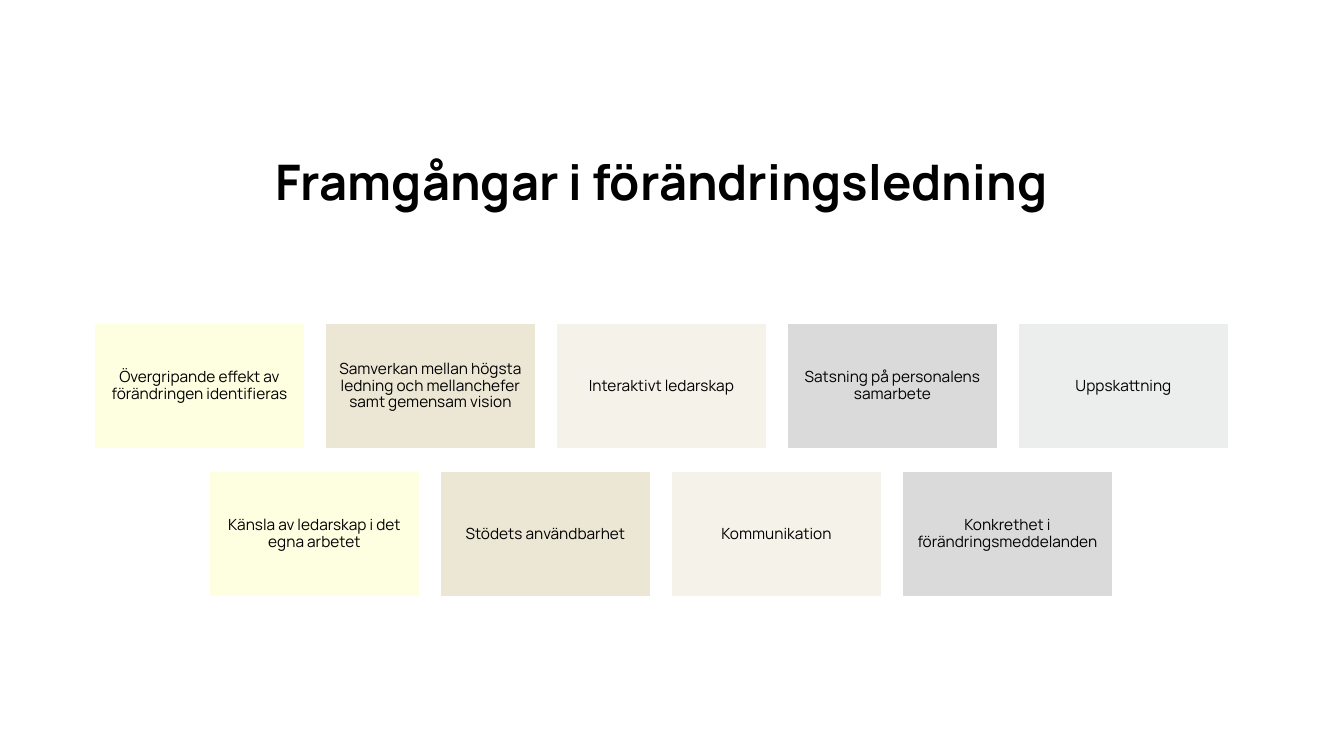
from pptx import Presentation
from pptx.dml.color import RGBColor
from pptx.enum.shapes import MSO_SHAPE
from pptx.enum.text import MSO_ANCHOR, PP_ALIGN
from pptx.util import Emu, Pt

RECT = MSO_SHAPE.RECTANGLE
MIDDLE = MSO_ANCHOR.MIDDLE
CENTER = PP_ALIGN.CENTER

FONT = "Manrope"
COLORS = {
    "text": "000000",
    "border": "FFFFFF",
    "yellow": "FEFFE1",
    "sand": "ECE7D5",
    "cream": "F5F2E9",
    "grey": "DADADA",
    "mist": "ECEDED",
}
CARD_COLORS = ["yellow", "sand", "cream", "grey", "mist"]

# Card grid, in px
CENTER_X, GRID_TOP = 661, 323
CARD_W, CARD_H = 211, 126
GAP_X, GAP_Y = 20, 22

ROWS = [
    [
        "Övergripande effekt av förändringen identifieras",
        "Samverkan mellan högsta ledning och mellanchefer samt gemensam vision",
        "Interaktivt ledarskap",
        "Satsning på personalens samarbete",
        "Uppskattning",
    ],
    [
        "Känsla av ledarskap i det egna arbetet",
        "Stödets användbarhet",
        "Kommunikation",
        "Konkrethet i förändringsmeddelanden",
    ],
]


def px(n):
    return Emu(round(n * 914400 / 100.8))


def rgb(name):
    return RGBColor.from_string(COLORS[name])


def set_text(shape, text, size=11, bold=False, inset=5):
    tf = shape.text_frame
    tf.word_wrap = True
    tf.vertical_anchor = MIDDLE
    tf.margin_left = tf.margin_right = px(inset)
    tf.margin_top = tf.margin_bottom = px(inset)
    p = tf.paragraphs[0]
    p.alignment = CENTER
    p.line_spacing = 0.9
    r = p.add_run()
    r.text = text
    r.font.name = FONT
    r.font.size = Pt(size)
    r.font.bold = bold
    r.font.color.rgb = rgb("text")


def add_title(s, text):
    box = s.shapes.add_textbox(px(93), px(112), px(1137), px(146))
    set_text(box, text, size=35, bold=True)


def add_card(s, x, y, text, color):
    card = s.shapes.add_shape(RECT, px(x), px(y), px(CARD_W), px(CARD_H))
    card.shadow.inherit = False
    card.fill.solid()
    card.fill.fore_color.rgb = rgb(color)
    card.line.color.rgb = rgb("border")
    card.line.width = Pt(1)
    set_text(card, text)


def add_card_row(s, y, texts):
    pitch = CARD_W + GAP_X
    left = CENTER_X - (len(texts) * pitch - GAP_X) // 2
    for i, (text, color) in enumerate(zip(texts, CARD_COLORS)):
        add_card(s, left + i * pitch, y, text, color)


def main():
    prs = Presentation()
    prs.slide_width, prs.slide_height = px(1344), px(756)
    s = prs.slides.add_slide(prs.slide_layouts[6])

    # Heading
    add_title(s, "Framgångar i förändringsledning")

    # Centred rows of cards
    for i, texts in enumerate(ROWS):
        add_card_row(s, GRID_TOP + i * (CARD_H + GAP_Y), texts)

    prs.save("out.pptx")


if __name__ == "__main__":
    main()
